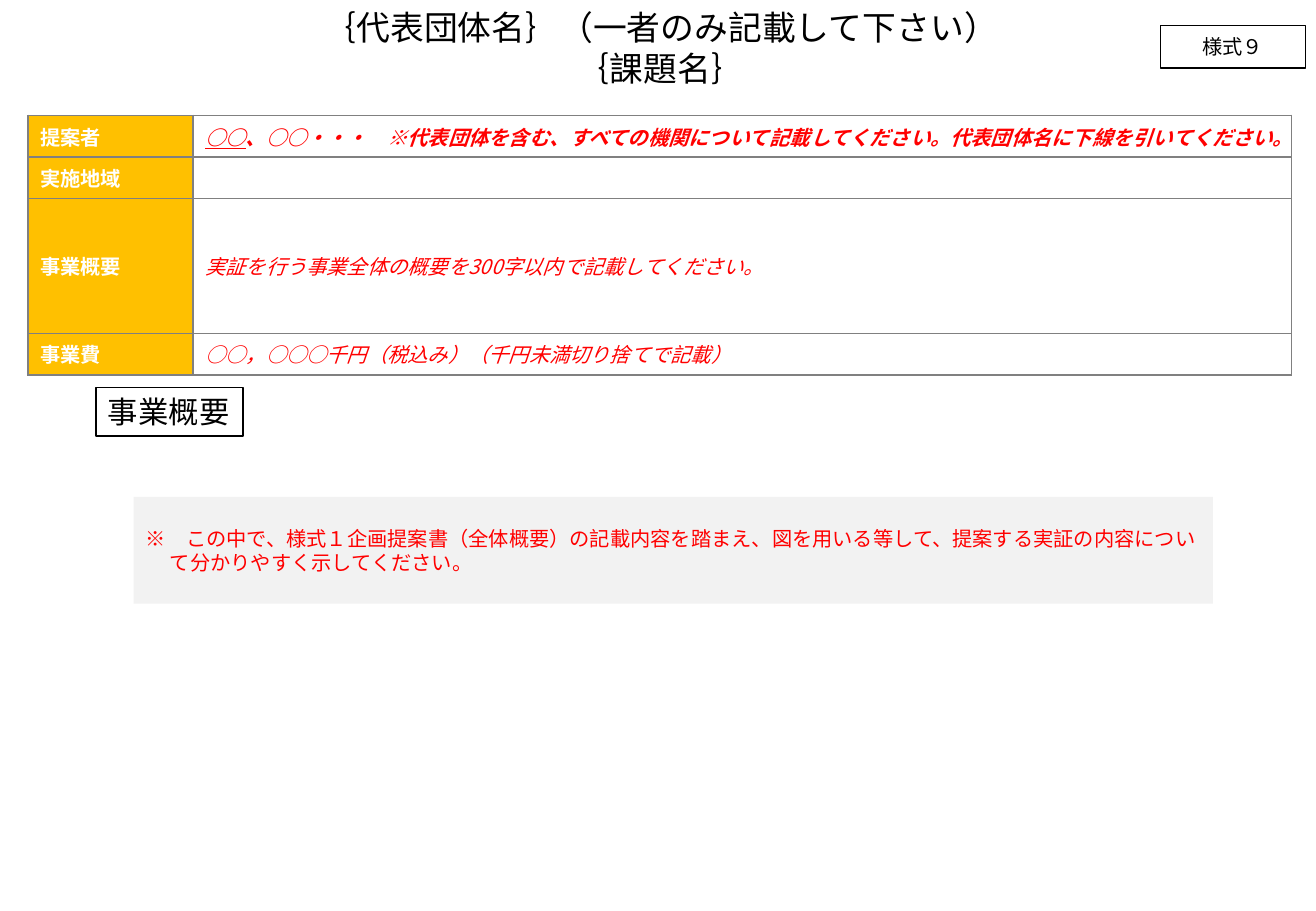
from lxml.etree import SubElement
from pptx import Presentation
from pptx.dml.color import RGBColor
from pptx.enum.shapes import MSO_SHAPE
from pptx.enum.text import MSO_ANCHOR, MSO_AUTO_SIZE, PP_ALIGN
from pptx.oxml import parse_xml
from pptx.oxml.ns import nsdecls, qn
from pptx.util import Inches, Pt

CJK = "Noto Sans CJK JP"
RED, WHITE, BLACK, AMBER, GRAY = "FF0000", "FFFFFF", "000000", "FFC000", "808080"


def rgb(color):
    return RGBColor.from_string(color)


class Form:
    """Holds the slide; all lengths are percentages of its width or height."""

    def __init__(self, prs):
        self.width, self.height = prs.slide_width, prs.slide_height
        self.s = prs.slides.add_slide(prs.slide_layouts[6])

    def x(self, share):
        return int(self.width * share / 100)

    def y(self, share):
        return int(self.height * share / 100)

    def box(self, x, y, w, h):
        return self.x(x), self.y(y), self.x(w), self.y(h)

    def add_runs(self, p, runs, **style):
        """Fill a paragraph with (text, format) runs on top of a shared style."""
        for text, extra in runs:
            r = p.add_run()
            r.text = text
            fmt = {"name": CJK, "size": 12, "color": BLACK, **style, **extra}
            r.font.color.rgb = rgb(fmt.pop("color"))
            fmt["size"] = Pt(fmt["size"])
            for key, value in fmt.items():
                setattr(r.font, key, value)
            SubElement(r.font._element, qn("a:ea"), typeface=CJK)

    def fill_text(self, tf, lines, hanging=False, align=PP_ALIGN.LEFT, **style):
        for i, line in enumerate(lines):
            p = tf.paragraphs[0] if i == 0 else tf.add_paragraph()
            p.alignment = align
            if hanging:
                pPr = p._p.get_or_add_pPr()
                pPr.set("marL", str(Inches(0.2)))
                pPr.set("indent", str(-Inches(0.2)))
            self.add_runs(p, [(line, {})], **style)

    def text(self, place, lines, **style):
        tf = self.s.shapes.add_textbox(*self.box(*place)).text_frame
        tf.word_wrap = True
        tf.auto_size = MSO_AUTO_SIZE.SHAPE_TO_FIT_TEXT
        self.fill_text(tf, lines, **style)

    def rect(self, place, line_text, fill=None, line=None, wrap=True,
             anchor=MSO_ANCHOR.MIDDLE, **style):
        sp = self.s.shapes.add_shape(MSO_SHAPE.RECTANGLE, *self.box(*place))
        sp.shadow.inherit = False
        if fill:
            sp.fill.solid()
            sp.fill.fore_color.rgb = rgb(fill)
        else:
            sp.fill.background()
        if line:
            sp.line.color.rgb = rgb(line)
            sp.line.width = Pt(0.75)
        else:
            sp.line.fill.background()
        tf = sp.text_frame
        tf.word_wrap, tf.vertical_anchor = wrap, anchor
        self.fill_text(tf, [line_text], **style)

    def cell(self, cell, runs, fill, **style):
        cell.vertical_anchor = MSO_ANCHOR.MIDDLE
        cell.fill.solid()
        cell.fill.fore_color.rgb = rgb(fill)
        p = cell.text_frame.paragraphs[0]
        self.add_runs(p, runs, **style)
        if not runs:
            SubElement(p._p, qn("a:endParaRPr"), sz="1200")
        for i, side in enumerate("LRTB"):
            cell._tc.get_or_add_tcPr().insert(i, parse_xml(
                f'<a:ln{side} w="{Pt(1)}" {nsdecls("a")}><a:solidFill>'
                f'<a:srgbClr val="{GRAY}"/></a:solidFill></a:ln{side}>'))

    def table(self, x, y, cols, rows):
        """Each row is (height, label, entry runs, entry style)."""
        place = self.box(x, y, sum(cols), sum(row[0] for row in rows))
        table = self.s.shapes.add_table(len(rows), len(cols), *place).table
        for column, width in zip(table.columns, cols):
            column.width = self.x(width)
        for i, (height, label, runs, style) in enumerate(rows):
            table.rows[i].height = self.y(height)
            self.cell(table.cell(i, 0), [(label, {})], AMBER,
                      name="Arial", color=WHITE, bold=True)
            self.cell(table.cell(i, 1), runs, WHITE,
                      color=RED, italic=True, **style)


def main():
    prs = Presentation()
    prs.slide_width, prs.slide_height = Inches(10.83), Inches(7.5)
    form = Form(prs)

    # Proposal table
    form.table(2.12, 12.67, (12.56, 83.47), [
        (4.53, "提案者", [
            ("○○", {"underline": True}),
            ("、○○・・・　※代表団体を含む、すべての機関について記載", {}),
            ("してください。代表団体名に下線を引いてください。", {"name": CJK}),
        ], {"name": "Arial", "bold": True}),
        (4.53, "実施地域", [], {}),
        (14.8, "事業概要",
         [("実証を行う事業全体の概要を300字以内で記載してください。", {})], {}),
        (4.53, "事業費",
         [("○○，○○○千円（税込み）（千円未満切り捨てで記載）", {})],
         {"name": "Calibri"}),
    ])

    # Title and form number
    form.text((0.37, 0.13, 99.63, 10.4),
              ["｛代表団体名｝（一者のみ記載して下さい）", "｛課題名｝"],
              hanging=True, align=PP_ALIGN.CENTER, size=20)
    form.rect((88.18, 2.8, 11, 4.67), "様式９", fill=WHITE, line=BLACK,
              align=PP_ALIGN.CENTER, name="Calibri")

    # Overview heading and instruction
    form.rect((7.29, 42.53, 11.17, 5.33), "事業概要", line=BLACK, wrap=False,
              anchor=MSO_ANCHOR.TOP, name="Calibri", size=18)
    form.rect((10.16, 54.53, 82, 11.73),
              "※　この中で、様式１企画提案書（全体概要）の記載内容を踏まえ、図を用いる等して、"
              "提案する実証の内容について分かりやすく示してください。",
              fill="F2F2F2", hanging=True, name="Arial", color=RED)

    prs.save("out.pptx")


if __name__ == "__main__":
    main()
